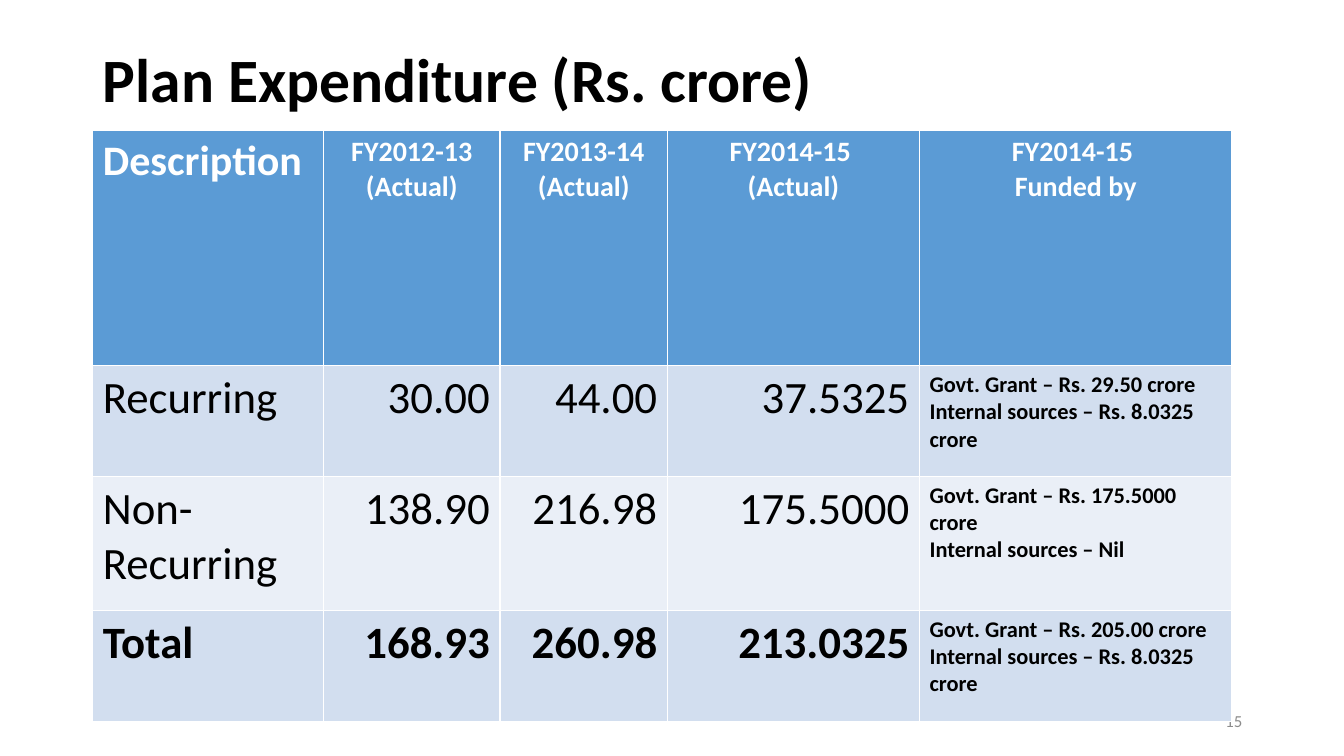
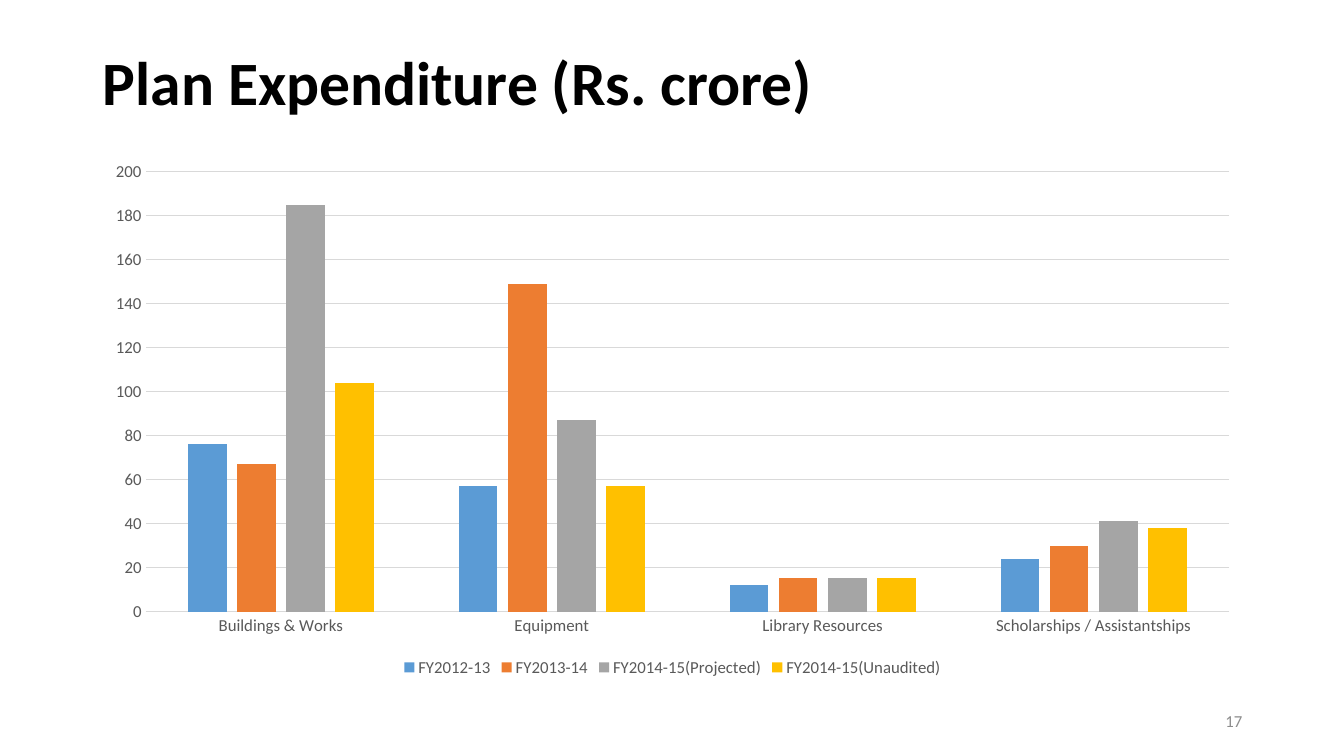
from dataclasses import dataclass

from pptx import Presentation
from pptx import util as u
from pptx.chart.data import CategoryChartData
from pptx.dml.color import RGBColor
from pptx.enum import chart as charts
from pptx.enum import text

SLIDE_WIDTH, SLIDE_HEIGHT = 13.33, 7.5
MARGIN = 0.92
CONTENT_WIDTH = 11.5
FONT = "Calibri"
COLORS = {
    "black": "000000",
    "white": "FFFFFF",
    "header": "5B9BD5",
    "band_dark": "D2DEEF",
    "band_light": "EAEFF7",
    "page_number": "8C8C8C",
    "label": "595959",
    "grid": "D9D9D9",
    "blue": "5B9BD5",
    "orange": "ED7D31",
    "gray": "A5A5A5",
    "gold": "FFC000",
}
LEFT, CENTER, RIGHT = text.PP_ALIGN.LEFT, text.PP_ALIGN.CENTER, text.PP_ALIGN.RIGHT


@dataclass
class CellStyle:
    size: int
    bold: bool
    align: text.PP_ALIGN
    color: str = "black"


@dataclass
class TableRow:
    height: float
    fill: str
    cells: list[str]
    styles: list[CellStyle]


@dataclass
class Series:
    name: str
    values: list[float]
    color: str


def body_styles(bold: bool) -> list[CellStyle]:
    """Label, three amounts and the funding note."""
    amount = CellStyle(32, bold, RIGHT)
    return [CellStyle(32, bold, LEFT), amount, amount, amount, CellStyle(16, True, LEFT)]


HEADER_STYLES = [CellStyle(30, True, LEFT, "white")] + [CellStyle(20, True, CENTER, "white")] * 4
COLUMN_WIDTHS = [2.29, 1.75, 1.66, 2.5, 3.1]
ROWS = [
    TableRow(2.34, "header",
             ["Description", "FY2012-13\n(Actual)", "FY2013-14\n(Actual)",
              "FY2014-15 \n(Actual)", "FY2014-15 \nFunded by"], HEADER_STYLES),
    TableRow(1.1, "band_dark",
             ["Recurring", "30.00", "44.00", "37.5325",
              "Govt. Grant – Rs. 29.50 crore\nInternal sources – Rs. 8.0325 crore"],
             body_styles(False)),
    TableRow(1.33, "band_light",
             ["Non-Recurring", "138.90", "216.98", "175.5000",
              "Govt. Grant – Rs. 175.5000 crore\nInternal sources – Nil"],
             body_styles(False)),
    TableRow(1.1, "band_dark",
             ["Total", "168.93", "260.98", "213.0325",
              "Govt. Grant – Rs. 205.00 crore\nInternal sources – Rs. 8.0325 crore"],
             body_styles(True)),
]
CATEGORIES = ["Buildings & Works", "Equipment", "Library Resources",
              "Scholarships / Assistantships"]
SERIES = [
    Series("FY2012-13", [76, 57, 12, 24], "blue"),
    Series("FY2013-14", [67, 149, 15, 30], "orange"),
    Series("FY2014-15(Projected)", [185, 87, 15, 41], "gray"),
    Series("FY2014-15(Unaudited)", [104, 57, 15, 38], "gold"),
]


def rgb(name: str) -> RGBColor:
    return RGBColor.from_string(COLORS[name])


def style_font(font, size: float, color: str, bold: bool = False) -> None:
    font.name = FONT
    font.size = u.Pt(size)
    font.bold = bold
    font.color.rgb = rgb(color)


def style_text(frame, style: CellStyle) -> None:
    for paragraph in frame.paragraphs:
        paragraph.alignment = style.align
        for run in paragraph.runs:
            style_font(run.font, style.size, style.color, style.bold)


def add_titled_slide(presentation, title_height: float, page_number: int):
    """Add a slide with the shared title and page number."""
    slide = presentation.slides.add_slide(presentation.slide_layouts[5])
    title = slide.shapes.title
    title.left, title.top = u.Inches(MARGIN), u.Inches(0.4)
    title.width, title.height = u.Inches(CONTENT_WIDTH), u.Inches(title_height)
    frame = title.text_frame
    frame.text = "Plan Expenditure (Rs. crore)"
    frame.auto_size = text.MSO_AUTO_SIZE.NONE
    frame.vertical_anchor = text.MSO_ANCHOR.MIDDLE
    frame.paragraphs[0].line_spacing = 0.9
    style_text(frame, CellStyle(44, True, LEFT))

    number_width = 3
    number = slide.shapes.add_textbox(
        u.Inches(MARGIN + CONTENT_WIDTH - number_width), u.Inches(6.95),
        u.Inches(number_width), u.Inches(0.4)).text_frame
    number.word_wrap = True
    number.vertical_anchor = text.MSO_ANCHOR.MIDDLE
    number.text = str(page_number)
    style_text(number, CellStyle(12, False, RIGHT, "page_number"))
    return slide


def add_expenditure_table(slide) -> None:
    table = slide.shapes.add_table(
        len(ROWS), len(COLUMN_WIDTHS), u.Inches(MARGIN), u.Inches(1.29),
        u.Inches(sum(COLUMN_WIDTHS)), u.Inches(sum(row.height for row in ROWS))).table
    for column, width in zip(table.columns, COLUMN_WIDTHS):
        column.width = u.Inches(width)
    for table_row, row in zip(table.rows, ROWS):
        table_row.height = u.Inches(row.height)
        for cell, content, style in zip(table_row.cells, row.cells, row.styles):
            cell.fill.solid()
            cell.fill.fore_color.rgb = rgb(row.fill)
            cell.text_frame.text = content
            style_text(cell.text_frame, style)


def style_line(line) -> None:
    line.color.rgb = rgb("grid")
    line.width = u.Pt(0.75)


def add_expenditure_chart(slide) -> None:
    data = CategoryChartData()
    data.categories = CATEGORIES
    for series in SERIES:
        data.add_series(series.name, series.values)
    chart = slide.shapes.add_chart(
        charts.XL_CHART_TYPE.COLUMN_CLUSTERED, u.Inches(MARGIN), u.Inches(1.5),
        u.Inches(CONTENT_WIDTH), u.Inches(5.26), data).chart
    style_font(chart.font, 10, "black")
    chart.has_title = False
    chart.has_legend = True
    chart.legend.position = charts.XL_LEGEND_POSITION.BOTTOM
    chart.legend.include_in_layout = False
    style_font(chart.legend.font, 12, "label")

    plot = chart.plots[0]
    plot.gap_width, plot.overlap = 219, -27
    plot.vary_by_categories = False
    for bars, series in zip(plot.series, SERIES):
        bars.format.fill.solid()
        bars.format.fill.fore_color.rgb = rgb(series.color)

    for axis in (chart.category_axis, chart.value_axis):
        axis.major_tick_mark = axis.minor_tick_mark = charts.XL_TICK_MARK.NONE
        style_font(axis.tick_labels.font, 12, "label")
    style_line(chart.category_axis.format.line)
    chart.value_axis.format.line.fill.background()
    chart.value_axis.minimum_scale, chart.value_axis.maximum_scale = 0, 200
    chart.value_axis.major_unit = 20
    style_line(chart.value_axis.major_gridlines.format.line)


def main() -> None:
    presentation = Presentation()
    presentation.slide_width = u.Inches(SLIDE_WIDTH)
    presentation.slide_height = u.Inches(SLIDE_HEIGHT)
    add_expenditure_table(add_titled_slide(presentation, 0.83, 15))
    add_expenditure_chart(add_titled_slide(presentation, 0.9, 17))
    presentation.save("out.pptx")


if __name__ == "__main__":
    main()
